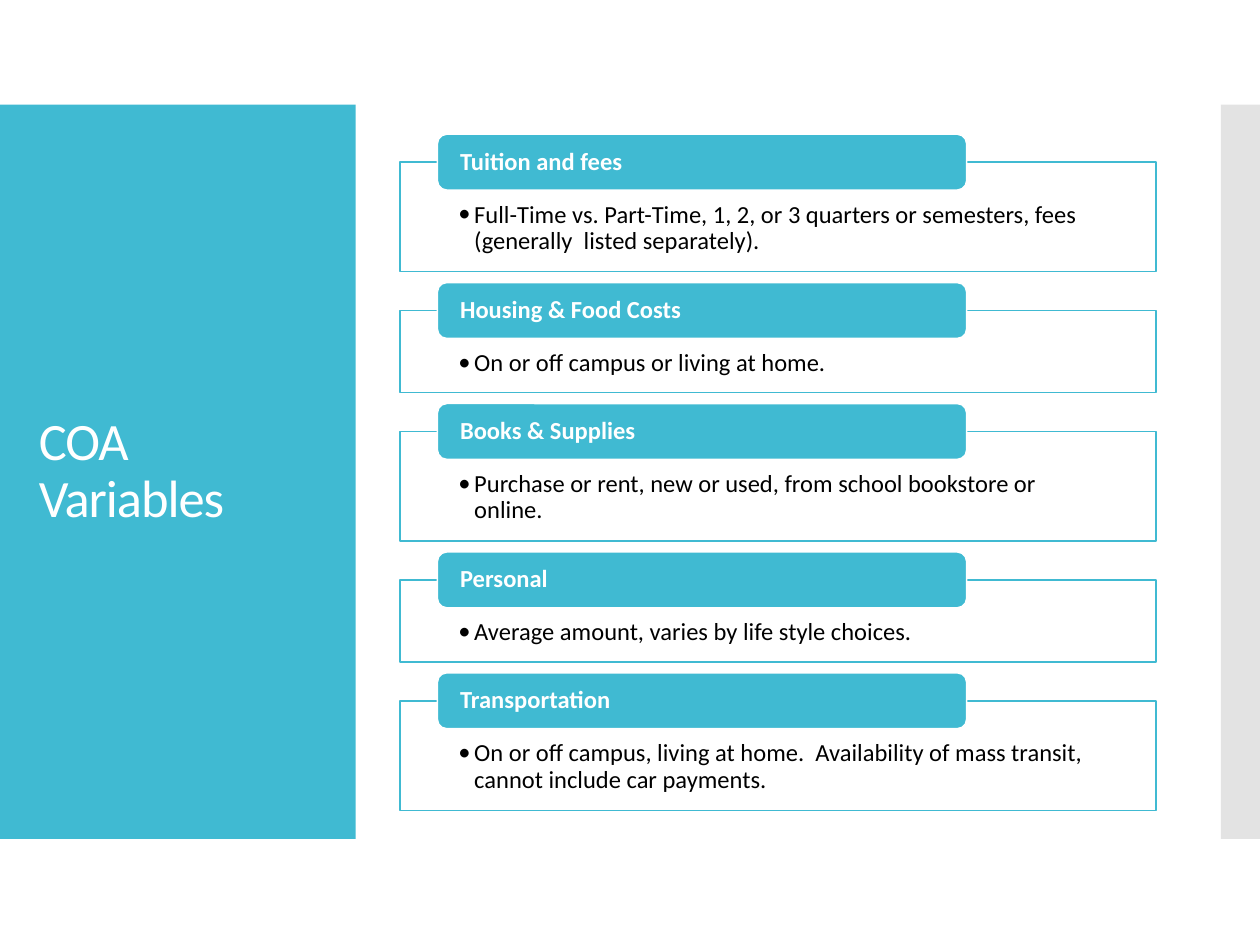
from lxml import etree
from pptx import Presentation
from pptx.dml.color import RGBColor
from pptx.enum.shapes import MSO_SHAPE
from pptx.enum.text import MSO_ANCHOR, MSO_AUTO_SIZE, PP_ALIGN
from pptx.oxml.ns import qn
from pptx.util import Pt

RECT, ROUND = MSO_SHAPE.RECTANGLE, MSO_SHAPE.ROUNDED_RECTANGLE
TOP, MIDDLE = MSO_ANCHOR.TOP, MSO_ANCHOR.MIDDLE
LEFT, FIXED = PP_ALIGN.LEFT, MSO_AUTO_SIZE.NONE

TEAL = RGBColor(0x40, 0xBA, 0xD2)
GRAY = RGBColor(0xC8, 0xC8, 0xC8)
WHITE = RGBColor(0xFF, 0xFF, 0xFF)
BLACK = RGBColor(0x00, 0x00, 0x00)

ITEMS = [
    ("Tuition and fees", 62.6,
     "Full-Time vs. Part-Time, 1, 2, or 3 quarters or semesters, fees (generally  listed separately)."),
    ("Housing & Food Costs", 46.9, "On or off campus or living at home."),
    ("Books & Supplies", 62.6,
     "Purchase or rent, new or used, from school bookstore or online."),
    ("Personal", 46.9, "Average amount, varies by life style choices."),
    ("Transportation", 62.6,
     "On or off campus, living at home.  Availability of mass transit, cannot include car payments."),
]
START, GAP, RISE = 92.7, 22.2, 16


class Deck:
    """Hold the text style and the slide being built."""

    def __init__(self, slide, font="Calibri", size=14):
        self.slide, self.font, self.size = slide, font, size

    def shape(self, kind, box, fill, line=None, alpha=100):
        shape = self.slide.shapes.add_shape(kind, *map(Pt, box))
        shape.shadow.inherit = False
        shape.fill.solid()
        shape.fill.fore_color.rgb = fill
        if alpha < 100:
            color = shape.element.spPr.find(qn("a:solidFill"))[0]
            etree.SubElement(color, qn("a:alpha"), val=str(alpha * 1000))
        if line is None:
            shape.line.fill.background()
        else:
            shape.line.color.rgb = line
            shape.line.width = Pt(0.85)
        return shape

    def label(self, shape, text, color, size, anchor, pads):
        frame = shape.text_frame
        frame.text = text
        frame.word_wrap = True
        frame.auto_size = FIXED
        frame.vertical_anchor = anchor
        (frame.margin_left, frame.margin_top,
         frame.margin_right, frame.margin_bottom) = map(Pt, pads)
        para = frame.paragraphs[0]
        para.alignment = LEFT
        para.line_spacing = 0.9
        para.font.name = self.font
        para.font.size = Pt(size)
        para.font.color.rgb = color
        return para

    def title(self, text, box):
        title = self.slide.shapes.title
        title.left, title.top, title.width, title.height = map(Pt, box)
        para = self.label(title, text, WHITE, 30, MIDDLE, (7.2, 3.6, 7.2, 3.6))
        para.runs[0]._r.get_or_add_rPr().set("spc", "-60")
        self.slide.shapes.element.append(title.element)

    def panel(self, text, top, high):
        box = self.shape(RECT, (228.5, top, 432, high), WHITE, TEAL, 90)
        para = self.label(box, text, BLACK, self.size, TOP, (33.5, 22.7, 33.5, 8))
        props = para._p.get_or_add_pPr()
        props.set("marL", str(Pt(9)))
        props.set("indent", str(-Pt(9)))
        etree.SubElement(props, qn("a:buFont"), typeface=self.font)
        etree.SubElement(props, qn("a:buChar"), char="•")
        props.append(props.find(qn("a:defRPr")))

    def tab(self, text, top):
        tab = self.shape(ROUND, (250, top, 302.4, 31.9), TEAL, WHITE)
        para = self.label(tab, text, WHITE, self.size, MIDDLE, (11.4, 0, 11.4, 0))
        para.font.bold = True


def main():
    show = Presentation()
    show.slide_width, show.slide_height = Pt(720), Pt(540)
    deck = Deck(show.slides.add_slide(show.slide_layouts[5]))
    deck.shape(RECT, (0, 59.8, 203.3, 419.6), TEAL)
    deck.shape(RECT, (697.6, 59.8, 22.4, 419.6), GRAY, alpha=50)
    deck.title("COA Variables", (15, 88.5, 174.2, 362.2))
    top = START
    for head, high, note in ITEMS:
        deck.panel(note, top, high)
        deck.tab(head, top - RISE)
        top += high + GAP
    show.save("out.pptx")


if __name__ == "__main__":
    main()
